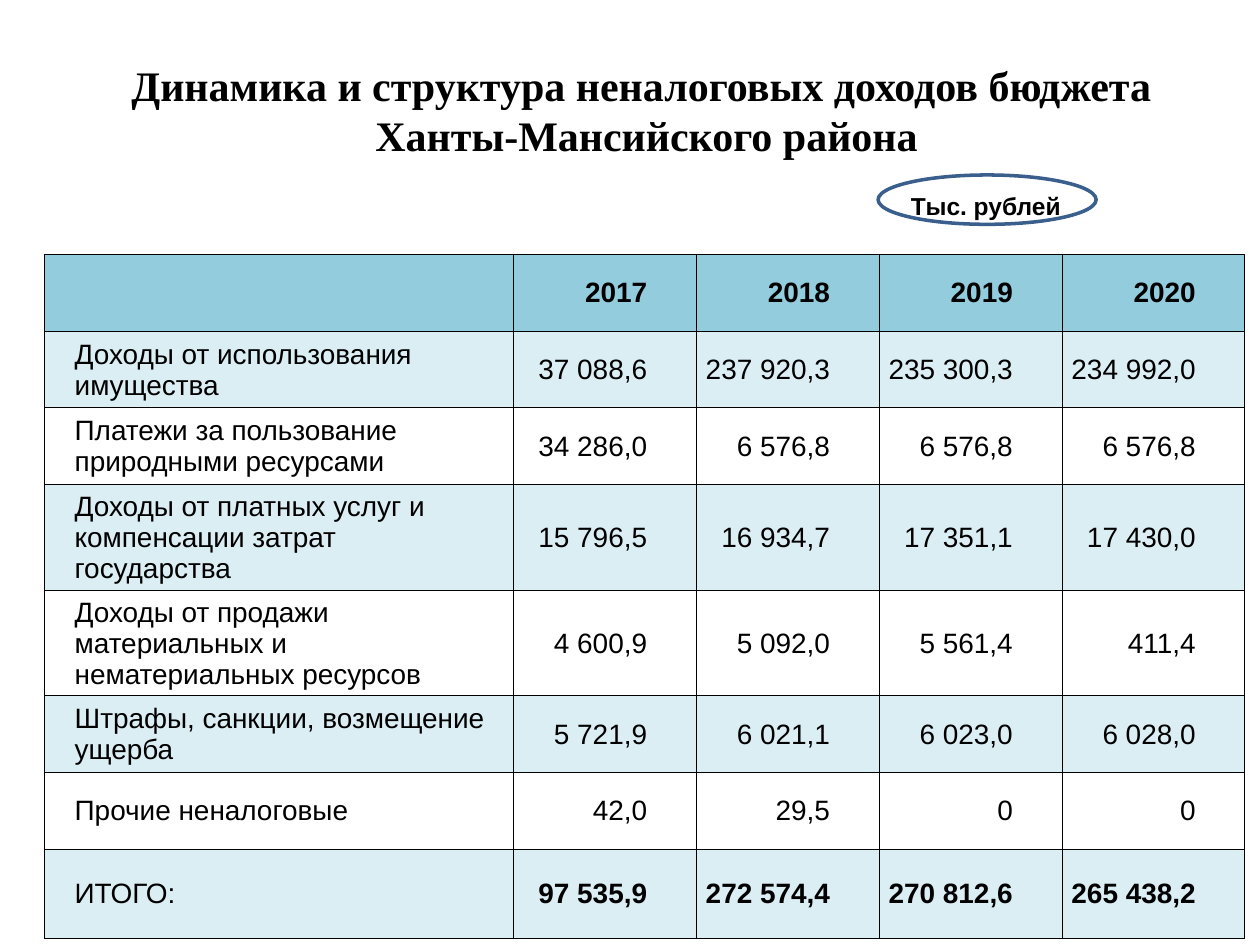
import pptx
import pptx.util
import pptx.dml.color
import pptx.enum.shapes
import pptx.enum.text
import pptx.oxml
import pptx.oxml.ns
import lxml.etree

Pt = pptx.util.Pt
RGBColor = pptx.dml.color.RGBColor
ALIGN = pptx.enum.text.PP_ALIGN
MIDDLE = pptx.enum.text.MSO_ANCHOR.MIDDLE
qn = pptx.oxml.ns.qn

BLACK = RGBColor(0x00, 0x00, 0x00)
WHITE = RGBColor(0xFF, 0xFF, 0xFF)
HEADER_BLUE = RGBColor(0x93, 0xCD, 0xDD)
BAND_BLUE = RGBColor(0xDB, 0xEE, 0xF4)
OUTLINE_BLUE = RGBColor(0x3A, 0x5F, 0x8C)

TITLE = "Динамика и структура неналоговых доходов бюджета\v Ханты-Мансийского района"
UNIT = "Тыс. рублей"
REVENUES = [
    ("", "2017", "2018", "2019", "2020"),
    ("Доходы от использования имущества", "37 088,6", "237 920,3", "235 300,3", "234 992,0"),
    ("Платежи за пользование природными ресурсами", "34 286,0", "6 576,8", "6 576,8", "6 576,8"),
    ("Доходы от платных услуг и компенсации затрат государства",
     "15 796,5", "16 934,7", "17 351,1", "17 430,0"),
    ("Доходы от продажи материальных и нематериальных ресурсов",
     "4 600,9", "5 092,0", "5 561,4", "411,4"),
    ("Штрафы, санкции, возмещение ущерба", "5 721,9", "6 021,1", "6 023,0", "6 028,0"),
    ("Прочие неналоговые", "42,0", "29,5", "0", "0"),
    ("ИТОГО:", "97 535,9", "272 574,4", "270 812,6", "265 438,2"),
]
COLUMN_WIDTHS = [268] + [104.5] * 4
ROW_HEIGHTS = [43.8, 43.8, 43.8, 60.4, 60.4, 43.8, 43.8, 51]


def set_font(paragraph, name, size, bold):
    paragraph.font.name = name
    paragraph.font.size = Pt(size)
    paragraph.font.bold = bold
    paragraph.font.color.rgb = BLACK


def add_borders(cell):
    properties = cell._tc.get_or_add_tcPr()
    for position, side in enumerate(("a:lnL", "a:lnR", "a:lnT", "a:lnB")):
        border = lxml.etree.Element(qn(side), w=str(Pt(0.5)))
        fill = lxml.etree.SubElement(border, qn("a:solidFill"))
        lxml.etree.SubElement(fill, qn("a:srgbClr"), val=str(BLACK))
        properties.insert(position, border)


def fill_cell(cell, text, row, column):
    is_label = column == 0
    is_header = row == 0
    cell.text = text
    cell.vertical_anchor = MIDDLE
    cell.margin_left = Pt(17.3 if is_label else 0.7)
    cell.margin_right = Pt(8.6 if is_label else 28.1)
    cell.margin_top = Pt(0.7)
    cell.margin_bottom = Pt(0)
    cell.fill.solid()
    cell.fill.fore_color.rgb = HEADER_BLUE if is_header else BAND_BLUE if row % 2 else WHITE
    paragraph = cell.text_frame.paragraphs[0]
    paragraph.alignment = ALIGN.LEFT if is_label else ALIGN.RIGHT
    is_total = row == len(REVENUES) - 1
    set_font(paragraph, "Arial", 16, is_header or (is_total and not is_label))
    add_borders(cell)


presentation = pptx.Presentation()
presentation.slide_width = Pt(720)
presentation.slide_height = Pt(540)
slide = presentation.slides.add_slide(presentation.slide_layouts[5])

title = slide.shapes.title
title.left, title.top, title.width, title.height = Pt(42.5), Pt(26), Pt(648), Pt(73.5)
title.text_frame.text = TITLE
title.text_frame.vertical_anchor = MIDDLE
heading = title.text_frame.paragraphs[0]
heading.alignment = ALIGN.CENTER
set_font(heading, "Times New Roman", 24, True)

revenue_table = slide.shapes.add_table(
    len(REVENUES), len(COLUMN_WIDTHS), Pt(25.4), Pt(145.4),
    Pt(sum(COLUMN_WIDTHS)), Pt(sum(ROW_HEIGHTS))).table
for column, width in zip(revenue_table.columns, COLUMN_WIDTHS):
    column.width = Pt(width)
for row, height in zip(revenue_table.rows, ROW_HEIGHTS):
    row.height = Pt(height)
for row, values in enumerate(REVENUES):
    for column, text in enumerate(values):
        fill_cell(revenue_table.cell(row, column), text, row, column)

unit_oval = slide.shapes.add_shape(
    pptx.enum.shapes.MSO_SHAPE.OVAL, Pt(501.8), Pt(100), Pt(124.6), Pt(28.2))
unit_oval.shadow.inherit = False
unit_oval.fill.background()
unit_oval.line.color.rgb = OUTLINE_BLUE
unit_oval.line.width = Pt(2)

unit_label = slide.shapes.add_textbox(Pt(513.4), Pt(105.8), Pt(118.8), Pt(24.5))
unit_label.text_frame.word_wrap = True
unit_label.text_frame.text = UNIT
set_font(unit_label.text_frame.paragraphs[0], "Arial", 14, True)

presentation.save("out.pptx")
